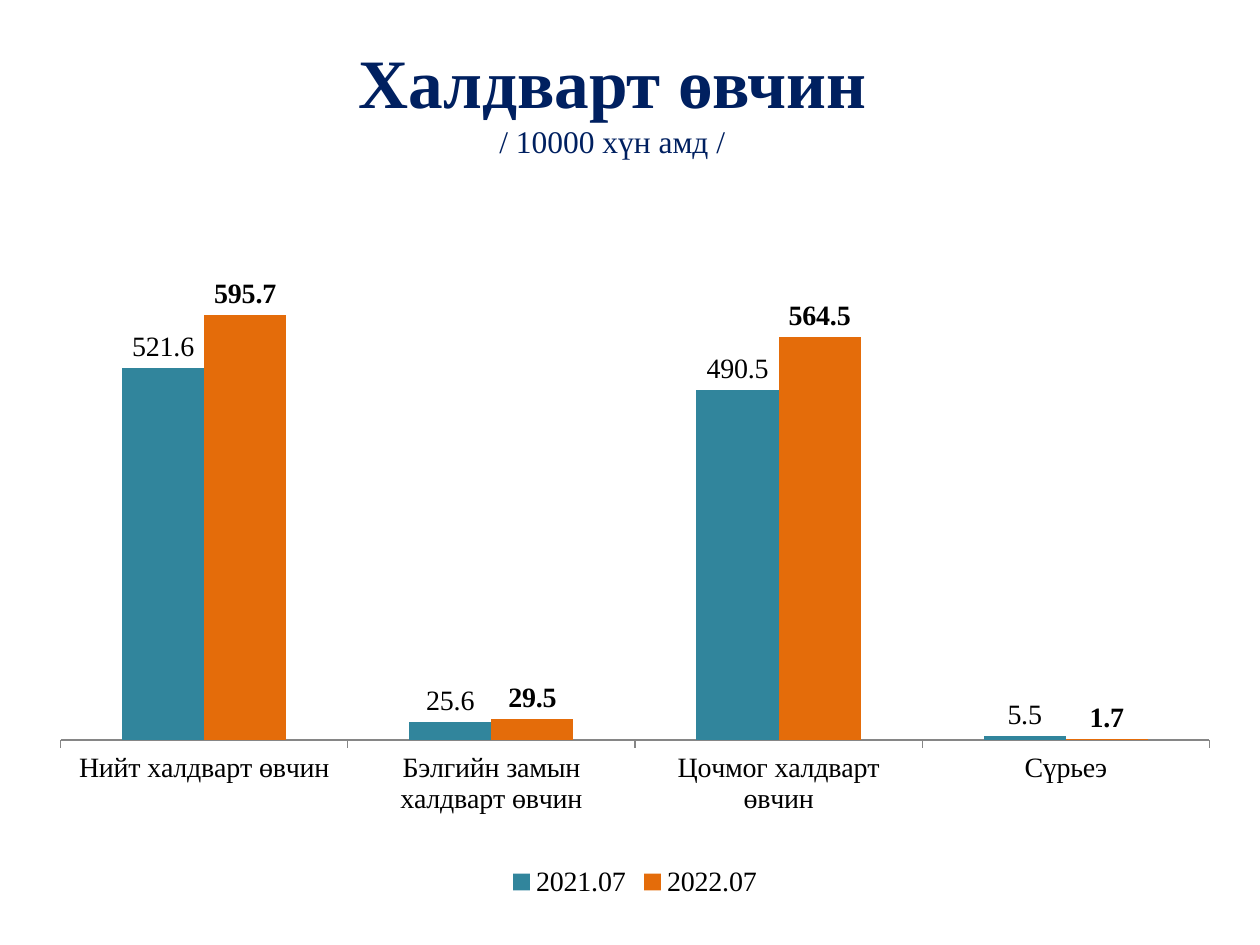
from lxml import etree
from pptx import Presentation
from pptx.chart.data import CategoryChartData as Data
from pptx.dml.color import RGBColor as RGB
from pptx.enum.chart import XL_CHART_TYPE as Kind, XL_LABEL_POSITION as Spot
from pptx.enum.chart import XL_LEGEND_POSITION as Side, XL_TICK_MARK as Tick
from pptx.enum.text import MSO_ANCHOR as Anchor, MSO_AUTO_SIZE as Fit, PP_ALIGN as Align
from pptx.oxml.ns import qn
from pptx.util import Inches, Pt

FONT = "Times New Roman"
HUES = {"navy": "002060", "teal": "31859C", "orange": "E46C0A", "black": "000000", "gray": "868686"}


def style(font, hue, **looks):
    font.color.rgb = RGB.from_string(HUES[hue])
    for key, val in {"name": FONT, **looks}.items():
        setattr(font, key, val)


deck = Presentation()
deck.slide_width, deck.slide_height = Inches(10), Inches(7.5)
slide = deck.slides.add_slide(deck.slide_layouts[5])

title = slide.shapes.title
box = {"left": 0.5, "top": 0.25, "width": 9, "height": 1.08}
for key, val in box.items():
    setattr(title, key, Inches(val))
frame = title.text_frame
frame.auto_size = Fit.NONE
frame.vertical_anchor = Anchor.MIDDLE
frame.text = "Халдварт өвчин\n/ 10000 хүн амд /"
looks = [{"size": Pt(39.6), "bold": True}, {"size": Pt(18), "bold": False}]
for para, look in zip(frame.paragraphs, looks):
    para.alignment = Align.CENTER
    para.space_before = Pt(0)
    style(para.runs[0].font, "navy", **look)
frame.paragraphs[0]._p.get_or_add_pPr().set("marR", str(Inches(0.28)))

data = Data(number_format="0.0")
data.categories = ["Нийт халдварт өвчин", "Бэлгийн замын халдварт өвчин",
                   "Цочмог халдварт өвчин", "Сүрьеэ"]
data.add_series("2021.07", [521.6, 25.6, 490.5, 5.5])
data.add_series("2022.07", [595.7, 29.5, 564.5, 1.7])
chart = slide.shapes.add_chart(
    Kind.COLUMN_CLUSTERED, Inches(0.33), Inches(1.75), Inches(9.42), Inches(5.42), data).chart
style(chart.font, "black", size=Pt(16))
chart.has_title = False
chart.has_legend = True
chart.legend.position = Side.BOTTOM
chart.legend.include_in_layout = False

vals = chart.value_axis
vals.visible = False
vals.has_major_gridlines = False
vals.minimum_scale, vals.maximum_scale = 0, 700
cats = chart.category_axis
cats.major_tick_mark = Tick.OUTSIDE
cats.format.line.color.rgb = RGB.from_string(HUES["gray"])
cats.format.line.width = Pt(0.75)

plot = chart.plots[0]
plot.gap_width, plot.overlap = 150, 0
plot.vary_by_categories = False
for row, hue, bold in zip(plot.series, ["teal", "orange"], [False, True]):
    row.format.fill.solid()
    row.format.fill.fore_color.rgb = RGB.from_string(HUES[hue])
    row.invert_if_negative = False
    tags = row.data_labels
    tags.show_value = True
    tags.number_format, tags.number_format_is_linked = "0.0", False
    tags.position = Spot.OUTSIDE_END
    style(tags.font, "black", size=Pt(16), bold=bold)

area = chart._chartSpace.chart.plotArea
for old in area.findall(qn("c:layout")):
    area.remove(old)
lay = etree.Element(qn("c:layout"))
area.insert(0, lay)
man = etree.SubElement(lay, qn("c:manualLayout"))
rules = {"layoutTarget": "inner", "xMode": "edge", "yMode": "edge",
         "x": 0.016, "y": 0.029, "w": 0.968, "h": 0.732}
for key, val in rules.items():
    etree.SubElement(man, qn("c:" + key)).set("val", str(val))

deck.save("out.pptx")
